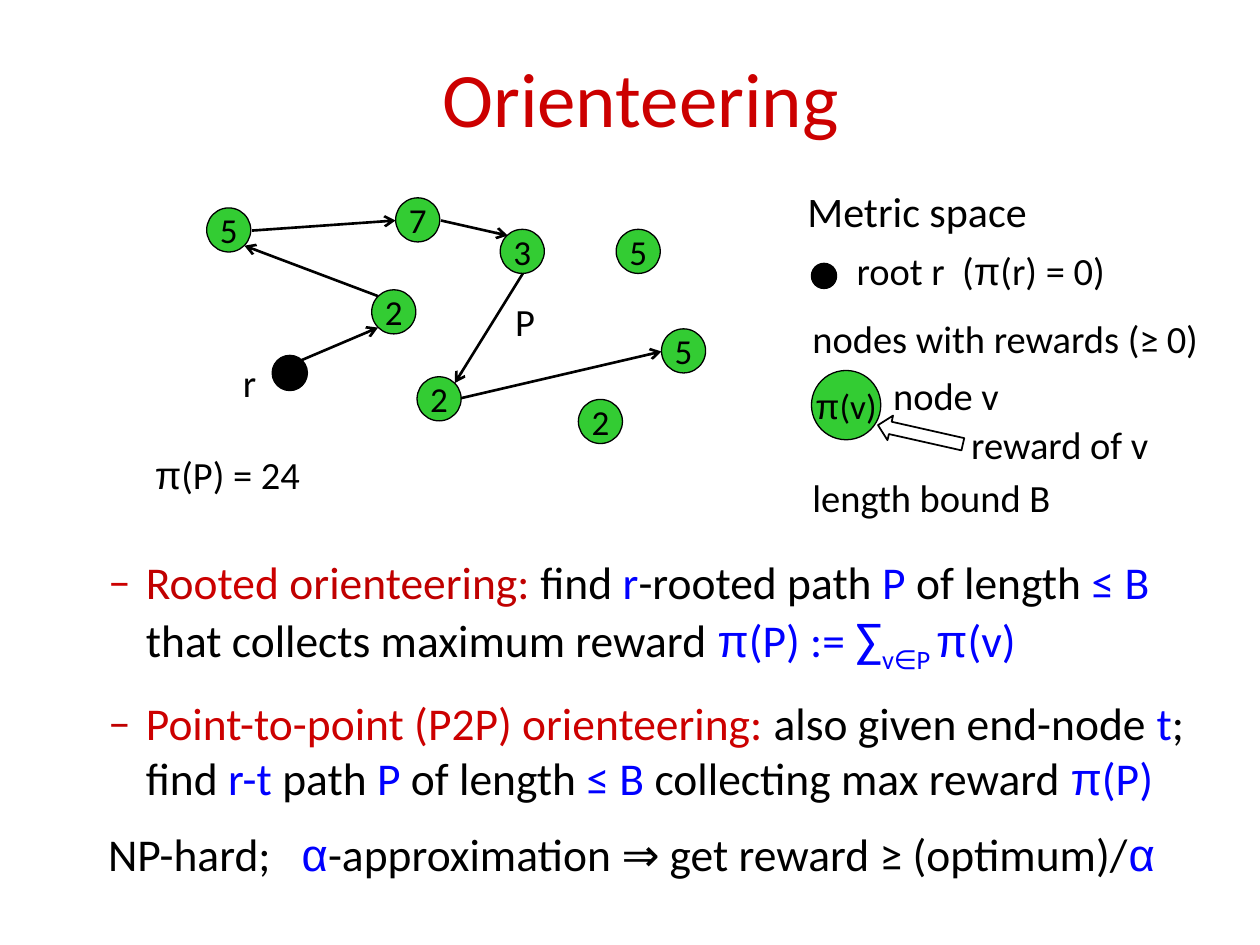
from itertools import groupby

from lxml.etree import SubElement
from pptx import Presentation
from pptx.dml.color import RGBColor
from pptx.enum.shapes import MSO_CONNECTOR, MSO_SHAPE as SHAPE
from pptx.enum.text import MSO_ANCHOR as ANCHOR, PP_ALIGN as ALIGN
from pptx.oxml.ns import qn
from pptx.util import Inches, Pt

BLACK = RGBColor(0x00, 0x00, 0x00)
RED = RGBColor(0xCC, 0x00, 0x00)
DARK_RED = RGBColor(0xC0, 0x00, 0x00)
BLUE = RGBColor(0x00, 0x00, 0xFF)
GREEN = RGBColor(0x33, 0xCC, 0x33)
GREEK = "πα"


class SlideBuilder:
    font, greek_font = "Calibri", "Arial"
    node_size, label_size, body_size = 20, 22, 26

    def __init__(self, slide):
        self.slide = slide

    def add_runs(self, paragraph, runs, size):
        """Add (text, colour, size, baseline) runs, Greek letters in their own font."""
        paragraph.font.name = self.font
        paragraph.font.size = Pt(size)
        for text, colour, *extra in runs:
            for is_greek, letters in groupby(text, lambda c: c in GREEK):
                run = paragraph.add_run()
                run.text = "".join(letters)
                run.font.name = self.greek_font if is_greek else self.font
                run.font.size = Pt(extra[0] if extra else size)
                run.font.color.rgb = colour
                if len(extra) > 1:
                    run.font._element.set("baseline", str(extra[1] * 1000))

    def title(self, text, left, top, width, height):
        title = self.slide.shapes.title
        title.left, title.top = Inches(left), Inches(top)
        title.width, title.height = Inches(width), Inches(height)
        title.text_frame.vertical_anchor = ANCHOR.MIDDLE
        paragraph = title.text_frame.paragraphs[0]
        paragraph.alignment = ALIGN.CENTER
        self.add_runs(paragraph, [(text, RED)], 44)

    def text_box(self, left, top, width, height):
        box = self.slide.shapes.add_textbox(
            Inches(left), Inches(top), Inches(width), Inches(height))
        box.text_frame.word_wrap = True
        return box.text_frame

    def label(self, left, top, width, runs, size=None, height=0.47):
        if isinstance(runs, str):
            runs = [(runs, BLACK)]
        paragraph = self.text_box(left, top, width, height).paragraphs[0]
        self.add_runs(paragraph, runs, size or self.label_size)
        return paragraph

    def shape(self, kind, left, top, width, height, fill=None, line_width=0.75):
        shape = self.slide.shapes.add_shape(
            kind, Inches(left), Inches(top), Inches(width), Inches(height))
        shape.shadow.inherit = False
        if fill is None:
            shape.fill.background()
        else:
            shape.fill.solid()
            shape.fill.fore_color.rgb = fill
        shape.line.color.rgb = BLACK
        shape.line.width = Pt(line_width)
        return shape

    def node(self, left, top, reward="", size=0.35, fill=GREEN):
        circle = self.shape(SHAPE.OVAL, left, top, size, size, fill)
        if reward:
            frame = circle.text_frame
            frame.word_wrap = False
            frame.vertical_anchor = ANCHOR.MIDDLE
            frame.paragraphs[0].alignment = ALIGN.CENTER
            self.add_runs(frame.paragraphs[0], [(reward, BLACK)], self.node_size)

    def edge(self, x1, y1, x2, y2):
        edge = self.slide.shapes.add_connector(
            MSO_CONNECTOR.STRAIGHT, Inches(x1), Inches(y1), Inches(x2), Inches(y2))
        edge.line.color.rgb = BLACK
        edge.line.width = Pt(1.5)
        SubElement(edge.line._get_or_add_ln(), qn("a:tailEnd"), type="arrow")
        SubElement(edge._element.spPr, qn("a:effectLst"))

    def body(self, left, top, width, height, paragraphs):
        """Each paragraph is (dash colour or None, runs)."""
        frame = self.text_box(left, top, width, height)
        for i, (dash_colour, runs) in enumerate(paragraphs):
            paragraph = frame.add_paragraph() if i else frame.paragraphs[0]
            if i:
                paragraph.space_before = Pt(12)
            if dash_colour is not None:
                props = paragraph._p.get_or_add_pPr()
                props.set("marL", str(Inches(0.3)))
                props.set("indent", str(-Inches(0.3)))
                colour = SubElement(props, qn("a:buClr"))
                SubElement(colour, qn("a:srgbClr"), val=str(dash_colour))
                SubElement(props, qn("a:buFont"), typeface=self.font)
                SubElement(props, qn("a:buChar"), char="–")
            self.add_runs(paragraph, runs, self.body_size)


def main():
    prs = Presentation()
    prs.slide_width, prs.slide_height = Inches(10), Inches(7.5)
    page = SlideBuilder(prs.slides.add_slide(prs.slide_layouts[5]))
    page.title("Orienteering", 0.67, 0.31, 8.83, 0.92)

    # Graph: nodes with rewards, root, and the path P
    for left, top, reward in [
            (2.95, 2.3, "2"), (3.97, 1.82, "3"), (4.59, 3.17, "2"), (4.89, 1.82, "5"),
            (1.64, 1.65, "5"), (3.14, 1.57, "7"), (3.31, 2.99, "2"), (5.25, 2.61, "5")]:
        page.node(left, top, reward)
    page.node(2.16, 2.82, size=0.28, fill=BLACK)
    for ends in [
            (2.39, 2.86, 3, 2.6), (3, 2.35, 1.94, 1.95), (2, 1.83, 3.14, 1.75),
            (3.5, 1.75, 4.03, 1.87), (4.15, 2.17, 3.61, 3.04), (3.66, 3.16, 5.25, 2.79)]:
        page.edge(*ends)
    page.label(1.83, 2.8, 0.49, "r")
    page.label(3.99, 2.32, 0.53, "P")
    page.label(1.13, 3.53, 1.65, "π(P) = 24")

    # Legend
    page.label(6.31, 1.42, 2.87, "Metric space", size=24, height=0.5)
    page.node(6.44, 2.09, size=0.2, fill=BLACK)
    page.label(6.7, 1.91, 2.38, "root r  (π(r) = 0)")
    page.label(6.35, 2.45, 3.43, [
        ("nodes with rewards (≥", BLACK), (" ", BLUE, 20), ("0)", BLACK)])
    page.node(6.44, 2.94, "π(v)", size=0.55)
    page.label(6.99, 2.9, 1.23, "node v")
    reward_label = page.label(7.61, 3.35, 1.78, "reward of v", height=0.41)
    reward_label.line_spacing = Pt(22)
    pointer = page.shape(SHAPE.RIGHT_ARROW, 6.96, 3.35, 0.69, 0.2, line_width=1)
    pointer.rotation = 192.7
    page.label(6.35, 3.71, 2.53, "length bound B")

    # Problem definitions
    page.body(0.76, 4.35, 8.87, 2.76, [
        (RED, [
            ("Ro", DARK_RED), ("oted ", RED), ("orienteering: ", DARK_RED),
            ("find ", BLACK), ("r", BLUE), ("-rooted path ", BLACK), ("P ", BLUE),
            ("of length ", BLACK), ("≤ B", BLUE),
            (" that collects maximum reward ", BLACK), ("π(P) := ", BLUE),
            ("∑", BLUE, 28), ("v∈P ", BLUE, 26, -25), ("π(v)", BLUE)]),
        (DARK_RED, [
            ("Point-to-point (P2P) orienteering: ", RED),
            ("also given end-node ", BLACK), ("t", BLUE), ("; find ", BLACK),
            ("r-t ", BLUE), ("path ", BLACK), ("P", BLUE), (" of length ", BLACK),
            ("≤ B", BLUE), (" collecting max reward ", BLACK), ("π(P)", BLUE)]),
        (None, [
            ("NP-hard;   ", BLACK), ("α", BLUE),
            ("-approximation ⇒ get reward ≥ (optimum)/", BLACK), ("α", BLUE)]),
    ])
    prs.save("out.pptx")


if __name__ == "__main__":
    main()
